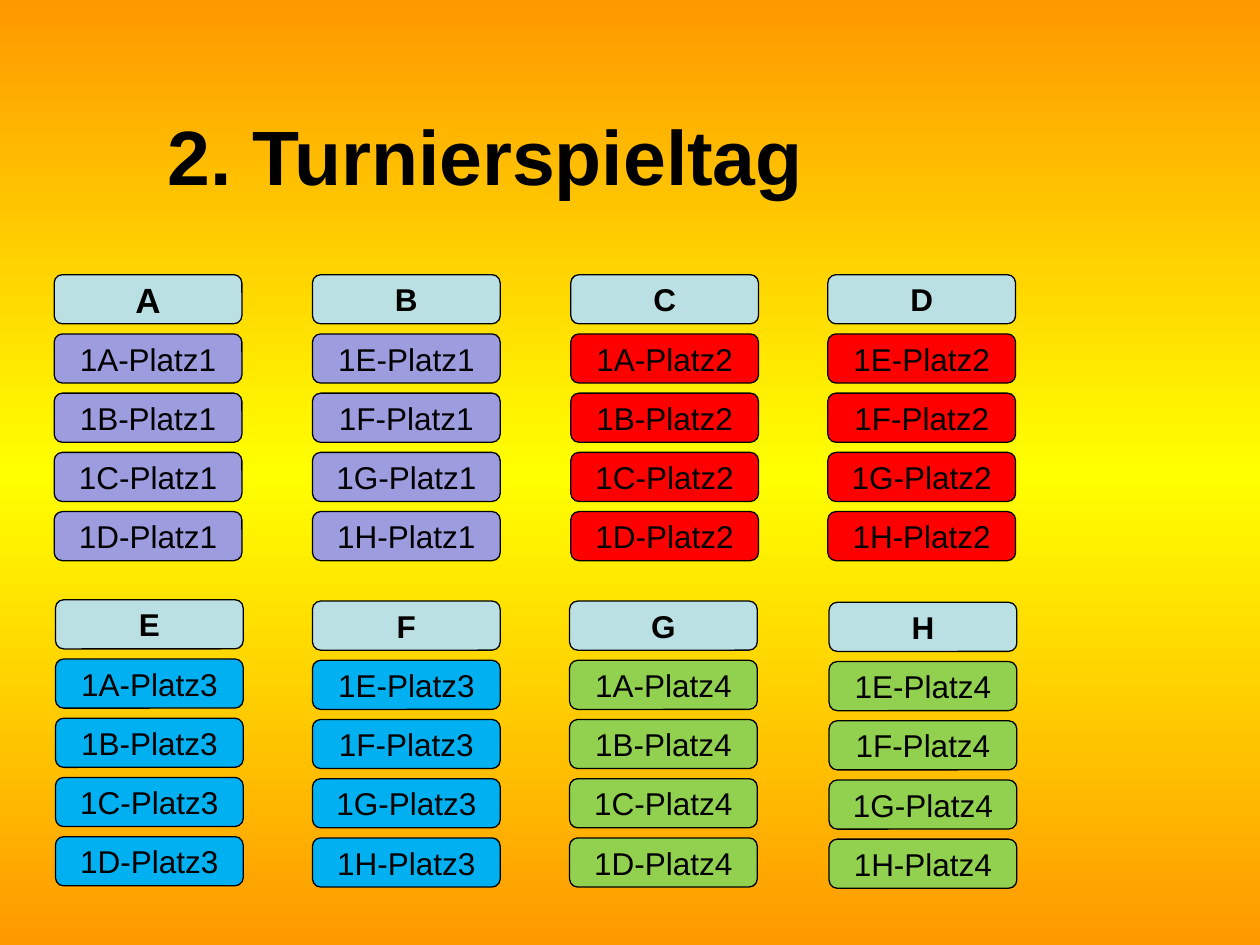
from copy import deepcopy

from pptx import Presentation
from pptx.dml.color import RGBColor
from pptx.enum.shapes import MSO_SHAPE
from pptx.enum.text import MSO_ANCHOR, PP_ALIGN
from pptx.oxml.ns import qn
from pptx.util import Emu, Pt

PX = 9144
BLACK = RGBColor(0x00, 0x00, 0x00)
ORANGE = RGBColor(0xFF, 0x99, 0x00)
YELLOW = RGBColor(0xFF, 0xFF, 0x00)
PALE_BLUE = RGBColor(0xBB, 0xE0, 0xE3)
LILAC = RGBColor(0x9C, 0x9C, 0xDF)
RED = RGBColor(0xFF, 0x00, 0x00)
BLUE = RGBColor(0x00, 0xB0, 0xF0)
GREEN = RGBColor(0x92, 0xD0, 0x50)

BOX_WIDTH, BOX_HEIGHT, ROW_STEP = 149, 39, 47
GROUPS = [
    ("A", 43, 218, "ABCD", 1, LILAC),
    ("B", 248, 218, "EFGH", 1, LILAC),
    ("C", 453, 218, "ABCD", 2, RED),
    ("D", 657, 218, "EFGH", 2, RED),
    ("E", 44, 476, "ABCD", 3, BLUE),
    ("F", 248, 477, "EFGH", 3, BLUE),
    ("G", 452, 477, "ABCD", 4, GREEN),
    ("H", 658, 478, "EFGH", 4, GREEN),
]


def place(shape, left, top, width, height):
    shape.left, shape.top = Emu(left * PX), Emu(top * PX)
    shape.width, shape.height = Emu(width * PX), Emu(height * PX)


def write(shape, text, size, bold):
    text_frame = shape.text_frame
    text_frame.text = text
    text_frame.vertical_anchor = MSO_ANCHOR.MIDDLE
    paragraph = text_frame.paragraphs[0]
    paragraph.alignment = PP_ALIGN.CENTER
    font = paragraph.runs[0].font
    font.name = "Arial"
    font.size = Pt(size)
    font.bold = bold
    font.color.rgb = BLACK


presentation = Presentation()
presentation.slide_width = Emu(1000 * PX)
presentation.slide_height = Emu(750 * PX)
slide = presentation.slides.add_slide(presentation.slide_layouts[5])

background = slide.background.fill
background.gradient()
background.gradient_angle = 270
first_stop, middle_stop = background.gradient_stops
first_stop.color.rgb = ORANGE
first_stop.position = 0
middle_stop.color.rgb = YELLOW
middle_stop.position = 0.5
stop_list = next(slide.element.iter(qn("a:gsLst")))
last_stop = deepcopy(stop_list[0])
last_stop.set("pos", "100000")
stop_list.append(last_stop)

title = slide.shapes.title
place(title, 39, 79, 693, 87)
write(title, "2. Turnierspieltag", 44, True)

for group, left, top, origins, rank, color in GROUPS:
    labels = [group] + [f"1{origin}-Platz{rank}" for origin in origins]
    for row, label in enumerate(labels):
        is_header = row == 0
        box = slide.shapes.add_shape(MSO_SHAPE.FLOWCHART_ALTERNATE_PROCESS, 0, 0, 0, 0)
        place(box, left, top + row * ROW_STEP, BOX_WIDTH, BOX_HEIGHT)
        box.shadow.inherit = False
        box.fill.solid()
        box.fill.fore_color.rgb = PALE_BLUE if is_header else color
        box.line.color.rgb = BLACK
        box.line.width = Pt(0.75)
        box.text_frame.word_wrap = False
        write(box, label, 20 if label == "A" else 18, is_header)

presentation.save("out.pptx")
